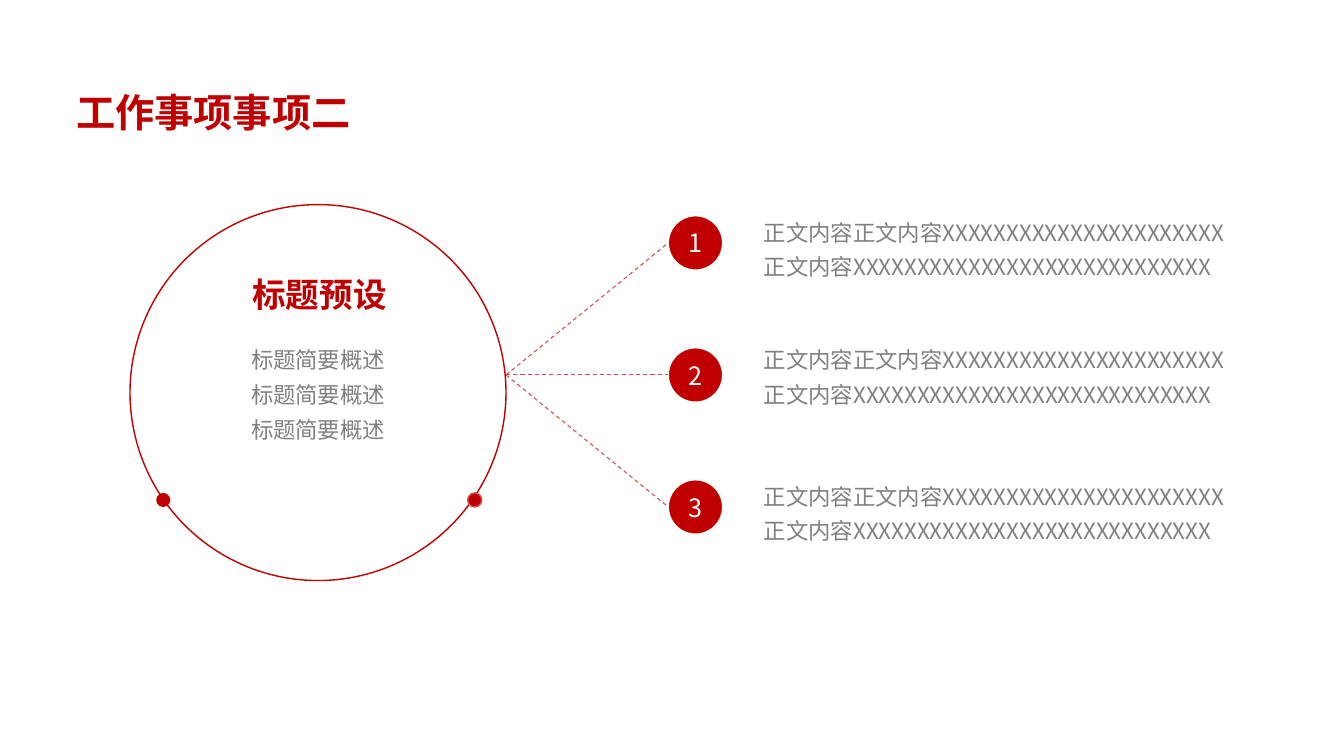
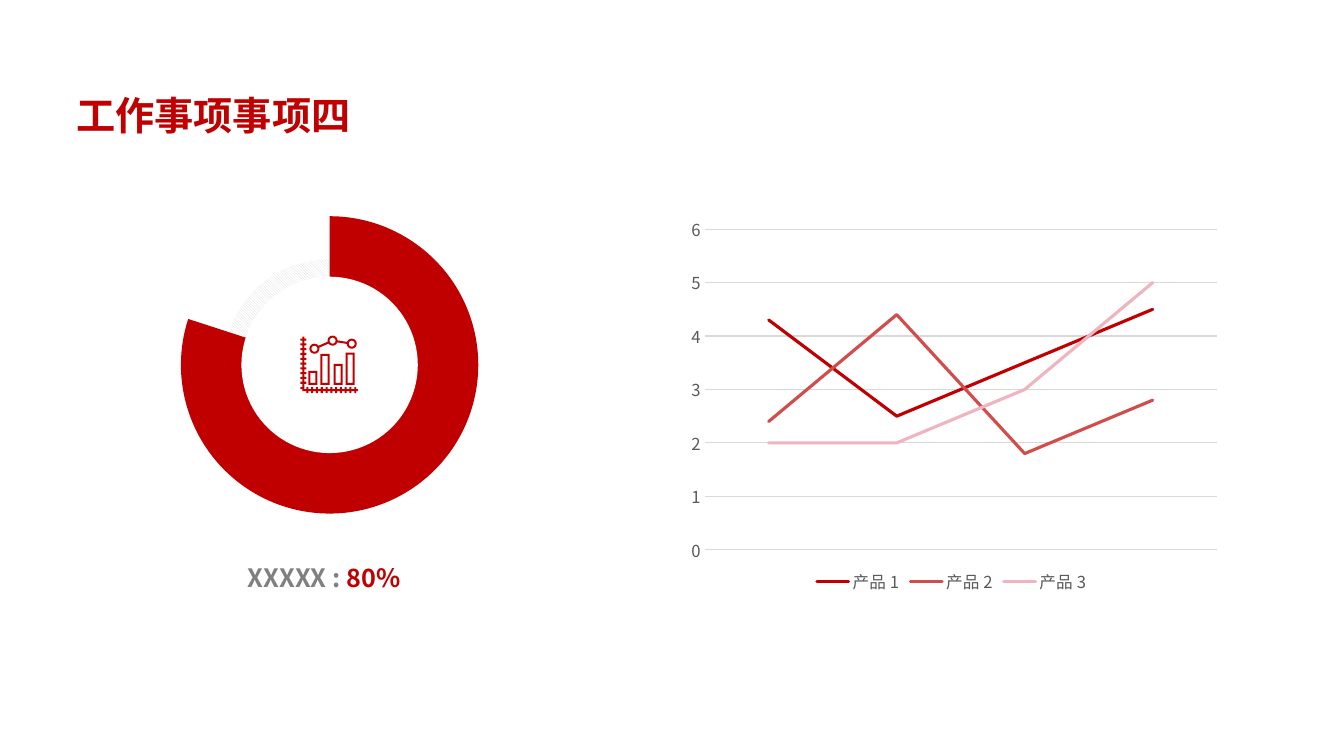
from dataclasses import dataclass
from math import cos, hypot, pi, sin
from lxml import etree
from pptx import Presentation
from pptx.chart.data import CategoryChartData
from pptx.dml.color import RGBColor
from pptx.enum.chart import XL_CHART_TYPE, XL_LEGEND_POSITION, XL_TICK_MARK
from pptx.enum.dml import MSO_LINE, MSO_PATTERN
from pptx.enum.shapes import MSO_CONNECTOR, MSO_SHAPE
from pptx.enum.text import MSO_ANCHOR, MSO_AUTO_SIZE, PP_ALIGN
from pptx.oxml.ns import qn
from pptx.util import Inches, Pt

OVAL, PIE = MSO_SHAPE.OVAL, MSO_SHAPE.PIE
LEFT, MID = PP_ALIGN.LEFT, PP_ALIGN.CENTER
DASH = MSO_LINE.DASH
HATCH = MSO_PATTERN.DARK_DOWNWARD_DIAGONAL
NO_TICK = XL_TICK_MARK.NONE

FONT = "Noto Sans CJK SC"
RED, ROSE, PINK = "C00000", "D34C4C", "EEB4C0"
GREY, DARK, PALE, WHITE = "808080", "595959", "D9D9D9", "FFFFFF"


@dataclass(frozen=True)
class Box:
    x: float
    y: float
    w: float
    h: float


@dataclass(frozen=True)
class Run:
    text: str
    size: float
    color: str
    bold: bool = False


@dataclass(frozen=True)
class Item:
    label: str
    disc: float
    body: float


@dataclass(frozen=True)
class Series:
    name: str
    vals: tuple
    color: str


@dataclass(frozen=True)
class Point:
    x: float
    y: float


ITEMS = (Item("1", 2.14, 2.04), Item("2", 3.45, 3.31), Item("3", 4.76, 4.66))
BODY = ("正文内容正文内容" + "X" * 22, "正文内容" + "X" * 28)
SERIES = (
    Series("产品 1", (4.3, 2.5, 3.5, 4.5), RED),
    Series("产品 2", (2.4, 4.4, 1.8, 2.8), ROSE),
    Series("产品 3", (2, 2, 3, 5), PINK),
)


def rgb(color: str) -> RGBColor:
    return RGBColor.from_string(color)


def place(box: Box) -> tuple:
    return tuple(Inches(n) for n in (box.x, box.y, box.w, box.h))


def round_box(mid: Point, size: float) -> Box:
    return Box(mid.x - size / 2, mid.y - size / 2, size, size)


def add_east(root) -> None:
    for latin in list(root.iter(qn("a:latin"))):
        east = etree.Element(qn("a:ea"))
        east.set("typeface", FONT)
        latin.addnext(east)


def set_font(font, size: float, color: str, bold: bool = False) -> None:
    font.name, font.size, font.bold = FONT, Pt(size), bold
    font.color.rgb = rgb(color)


def set_line(line, color: str, width: float) -> None:
    line.color.rgb = rgb(color)
    line.width = Pt(width)


def write(frame, rows: list, align=LEFT, space: float = 1.0) -> None:
    for i, row in enumerate(rows):
        para = frame.paragraphs[0] if i == 0 else frame.add_paragraph()
        para.alignment, para.line_spacing = align, space
        for part in row:
            run = para.add_run()
            run.text = part.text
            set_font(run.font, part.size, part.color, part.bold)
            add_east(run.font._element)


def add_text(slide, box: Box, rows: list, align=LEFT, space: float = 1.3) -> None:
    frame = slide.shapes.add_textbox(*place(box)).text_frame
    frame.word_wrap = True
    frame.auto_size = MSO_AUTO_SIZE.SHAPE_TO_FIT_TEXT
    write(frame, rows, align, space)


def paint(form, fill: str = "", line: str = "") -> None:
    form.shadow.inherit = False
    if fill:
        form.fill.solid()
        form.fill.fore_color.rgb = rgb(fill)
    else:
        form.fill.background()
    if line:
        set_line(form.line, line, 1)
    else:
        form.line.fill.background()


def add_form(slide, kind, box: Box, fill: str = "", line: str = ""):
    form = slide.shapes.add_shape(kind, *place(box))
    paint(form, fill, line)
    return form


def add_rule(slide, start: Point, end: Point) -> None:
    ends = (Inches(n) for n in (start.x, start.y, end.x, end.y))
    rule = slide.shapes.add_connector(MSO_CONNECTOR.STRAIGHT, *ends)
    set_line(rule.line, ROSE, 0.75)
    rule.line.dash_style = DASH
    etree.SubElement(rule._element.spPr, qn("a:effectLst"))


def add_page(deck, title: str, top: float):
    slide = deck.slides.add_slide(deck.slide_layouts[6])
    add_text(slide, Box(0.66, top, 3.39, 0.65), [[Run(title, 28, RED, True)]])
    return slide


def draw_topics(deck) -> None:
    slide = add_page(deck, "工作事项事项二", 0.69)
    brief = [[Run("标题简要概述", 16, GREY)]] * 3
    add_text(slide, Box(1.91, 3.31, 2.49, 1.47), brief, MID)
    add_text(slide, Box(1.86, 2.55, 2.62, 0.58), [[Run("标题预设", 24, RED, True)]], MID)
    add_form(slide, OVAL, Box(1.29, 2.03, 3.73, 3.73), line=RED)
    for x, edge in ((4.64, ROSE), (1.55, "")):
        add_form(slide, OVAL, Box(x, 4.89, 0.14, 0.14), RED, edge)
    size, left, hub = 0.54, 6.63, Point(5.02, 3.72)
    for item in ITEMS:
        disc = add_form(slide, OVAL, Box(left, item.disc, size, size), RED, WHITE)
        disc.text_frame.vertical_anchor = MSO_ANCHOR.MIDDLE
        write(disc.text_frame, [[Run(item.label, 18, WHITE)]], MID)
        add_rule(slide, hub, Point(left, item.disc + size / 2))
        rows = [[Run(text, 16, GREY)] for text in BODY]
        add_text(slide, Box(7.48, item.body, 5.18, 0.77), rows)


def frame_ring(x: float, y: float, right: float, foot: float) -> list:
    return [(x, y), (right, y), (right, foot), (x, foot)]


def disc_ring(mid: Point, size: float, count: int = 16) -> list:
    turns = [2 * pi * i / count for i in range(count)]
    return [(mid.x + size * cos(t), mid.y + size * sin(t)) for t in turns]


def link_ring(start: Point, end: Point, gap: float, half: float) -> list:
    span = hypot(end.x - start.x, end.y - start.y)
    dx, dy = (end.x - start.x) / span, (end.y - start.y) / span
    ends = ((gap, 1), (span - gap, 1), (span - gap, -1), (gap, -1))
    return [
        (start.x + dx * far - dy * side * half, start.y + dy * far + dx * side * half)
        for far, side in ends
    ]


def comb_ring() -> list:
    left, right, top, foot = 3.0, 3.02, 3.34, 3.88
    base, tip, out, half = 3.86, 3.55, 0.02, 0.01
    downs = [3.37 + 0.0475 * i for i in range(10)]
    alongs = [3.05 + 0.0475 * i for i in range(11)]

    def teeth(spots: list, edge: float, reach: float) -> list:
        pairs = ((-half, edge), (-half, reach), (half, reach), (half, edge))
        return [(spot + step, side) for spot in spots for step, side in pairs]

    def flip(ring: list) -> list:
        return [(x, y) for y, x in ring]

    inner = flip(teeth(downs, right, right + out))
    upper = teeth(alongs, base, base - out)
    lower = teeth(alongs, foot, foot + out)[::-1]
    outer = flip(teeth(downs + [3.85], left, left - out))[::-1]
    return [
        (left, top), (right, top), *inner, (right, base), *upper,
        (tip, base), (tip, foot), *lower, (left, foot), *outer,
    ]


def draw_icon(slide) -> None:
    dots = (Point(3.12, 3.46), Point(3.3, 3.38), Point(3.49, 3.41))
    rings = [comb_ring()]
    for x, top in ((3.06, 3.68), (3.18, 3.51), (3.31, 3.61), (3.43, 3.5)):
        rings.append(frame_ring(x, top, x + 0.09, 3.82))
        rings.append(frame_ring(x + 0.02, top + 0.02, x + 0.07, 3.8))
    for dot in dots:
        rings += [disc_ring(dot, 0.05), disc_ring(dot, 0.03)]
    for start, end in zip(dots, dots[1:]):
        rings.append(link_ring(start, end, 0.05, 0.01))
    pen = None
    for ring in rings:
        first, *rest = [(Inches(x), Inches(y)) for x, y in ring]
        if pen is None:
            pen = slide.shapes.build_freeform(*first)
        else:
            pen.move_to(*first)
        pen.add_line_segments(rest, close=True)
    paint(pen.convert_to_shape(), RED)


def draw_ring(slide) -> None:
    mid = Point(3.27, 3.62)
    back = add_form(slide, OVAL, round_box(mid, 2.1))
    back.fill.patterned()
    back.fill.pattern = HATCH
    back.fill.fore_color.rgb = rgb(PALE)
    back.fill.back_color.rgb = rgb(WHITE)
    pie = add_form(slide, PIE, round_box(mid, 2.95), RED)
    pie.adjustments[0], pie.adjustments[1] = 162, 118.8
    add_form(slide, OVAL, round_box(mid, 1.75), WHITE)
    draw_icon(slide)


def set_plot(chart, box: Box) -> None:
    area = chart.element.find(".//" + qn("c:plotArea"))
    for old in area.findall(qn("c:layout")):
        area.remove(old)
    layout = etree.Element(qn("c:layout"))
    area.insert(0, layout)
    manual = etree.SubElement(layout, qn("c:manualLayout"))
    parts = (
        ("layoutTarget", "inner"), ("xMode", "edge"), ("yMode", "edge"),
        ("x", box.x), ("y", box.y), ("w", box.w), ("h", box.h),
    )
    for tag, val in parts:
        etree.SubElement(manual, qn("c:" + tag)).set("val", str(val))


def draw_chart(slide) -> None:
    data = CategoryChartData()
    data.categories = ["1", "2", "3", "4"]
    for row in SERIES:
        data.add_series(row.name, row.vals)
    spot = place(Box(6.67, 2.15, 5.54, 3.78))
    chart = slide.shapes.add_chart(XL_CHART_TYPE.LINE, *spot, data).chart
    set_font(chart.font, 10, "000000")
    chart.has_title = False
    chart.has_legend = True
    chart.legend.position = XL_LEGEND_POSITION.BOTTOM
    chart.legend.include_in_layout = False
    set_font(chart.legend.font, 11.9, DARK)
    chart.category_axis.visible = False
    axis = chart.value_axis
    axis.major_tick_mark = axis.minor_tick_mark = NO_TICK
    axis.format.line.fill.background()
    set_line(axis.major_gridlines.format.line, PALE, 0.75)
    set_font(axis.tick_labels.font, 11.9, DARK)
    chart.plots[0].vary_by_categories = False
    for line, row in zip(chart.plots[0].series, SERIES):
        line.smooth = False
        set_line(line.format.line, row.color, 2.25)
        line._element.find(".//" + qn("a:ln")).set("cap", "rnd")
    set_plot(chart, Box(0.058, 0.023, 0.917, 0.85))
    add_east(chart.element)


def draw_data(deck) -> None:
    slide = add_page(deck, "工作事项事项四", 0.72)
    draw_ring(slide)
    draw_chart(slide)
    rate = [[Run("XXXXX : ", 18, GREY, True), Run("80%", 18, RED, True)]]
    add_text(slide, Box(2.36, 5.53, 1.94, 0.4), rate, space=1.0)


def main() -> None:
    deck = Presentation()
    deck.slide_width, deck.slide_height = Inches(40 / 3), Inches(7.5)
    draw_topics(deck)
    draw_data(deck)
    deck.save("out.pptx")


if __name__ == "__main__":
    main()
